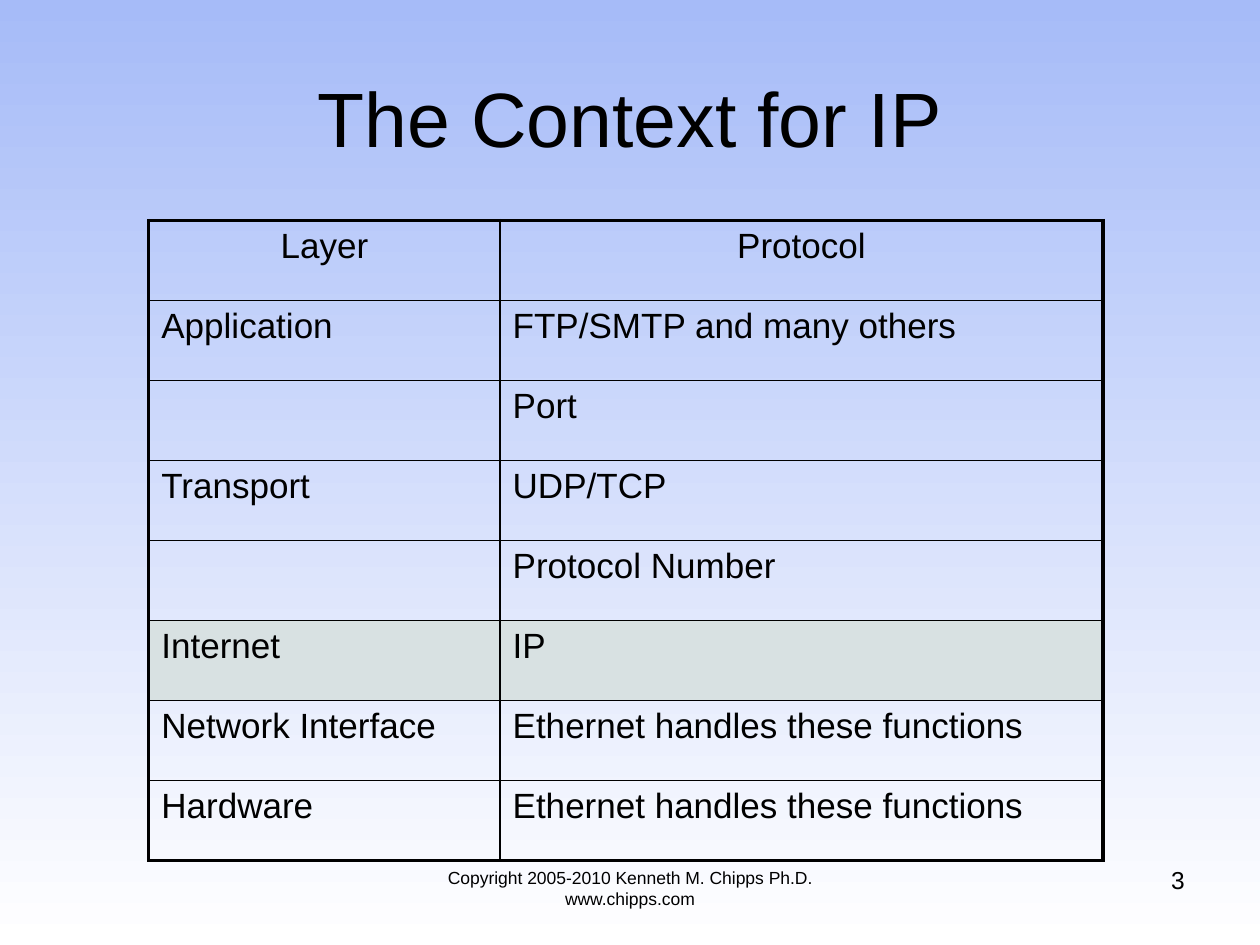
"""Build the slide that places IP among the network layers and their protocols."""
from lxml.etree import SubElement
from pptx import Presentation
from pptx.dml.color import RGBColor
from pptx.enum.text import MSO_ANCHOR as ANCHOR, PP_ALIGN as ALIGN
from pptx.oxml.ns import qn
from pptx.util import Pt

BLACK = RGBColor(0x00, 0x00, 0x00)
SKY = RGBColor(0xA6, 0xBB, 0xF8)
WHITE = RGBColor(0xFF, 0xFF, 0xFF)
HIGHLIGHT = RGBColor(0xD8, 0xE1, 0xE2)

TEXTS = [
    ("The Context for IP", (36, 21.6, 648, 90), 44, ALIGN.CENTER, ANCHOR.MIDDLE),
    ("Copyright 2005-2010 Kenneth M. Chipps Ph.D. www.chipps.com",
     (216, 492, 288, 37.5), 10, ALIGN.CENTER, ANCHOR.TOP),
    ("3", (516, 490.5, 168, 37.5), 14, ALIGN.RIGHT, ANCHOR.TOP),
]
ROWS = [
    ("Layer", "Protocol"),
    ("Application", "FTP/SMTP and many others"),
    ("", "Port"),
    ("Transport", "UDP/TCP"),
    ("", "Protocol Number"),
    ("Internet", "IP"),
    ("Network Interface", "Ethernet handles these functions"),
    ("Hardware", "Ethernet handles these functions"),
]
HIGHLIGHT_LAYER = "Internet"
TABLE_LEFT, TABLE_TOP, ROW_HEIGHT = 85, 126, 45.72
COL_WIDTHS = (200.75, 344.5)
OUTER, INNER = 2.25, 1


def write(tf, text, size, align):
    p = tf.paragraphs[0]
    p.alignment = align
    r = p.add_run()
    r.text = text
    for name, value in {"name": "Arial", "size": Pt(size)}.items():
        setattr(r.font, name, value)
    r.font.color.rgb = BLACK


def add_text(s, text, box, size, align, anchor):
    tf = s.shapes.add_textbox(*map(Pt, box)).text_frame
    for name, value in {"word_wrap": True, "vertical_anchor": anchor}.items():
        setattr(tf, name, value)
    write(tf, text, size, align)


def set_borders(cell, outer_sides):
    tc_pr = cell._tc.get_or_add_tcPr()
    for i, (side, is_outer) in enumerate(outer_sides.items()):
        ln = SubElement(tc_pr, qn(f"a:ln{side}"), w=str(Pt(OUTER if is_outer else INNER)))
        fill = SubElement(ln, qn("a:solidFill"))
        SubElement(fill, qn("a:srgbClr"), val=str(BLACK))
        tc_pr.remove(ln)
        tc_pr.insert(i, ln)


def add_layer_table(s):
    n_rows, n_cols = len(ROWS), len(COL_WIDTHS)
    box = (TABLE_LEFT, TABLE_TOP, sum(COL_WIDTHS), ROW_HEIGHT * n_rows)
    table = s.shapes.add_table(n_rows, n_cols, *map(Pt, box)).table
    table.first_row = table.horz_banding = False
    for col, width in zip(table.columns, COL_WIDTHS):
        col.width = Pt(width)
    for i, row in enumerate(ROWS):
        table.rows[i].height = Pt(ROW_HEIGHT)
        for j, text in enumerate(row):
            cell = table.cell(i, j)
            if row[0] == HIGHLIGHT_LAYER:
                cell.fill.solid()
                cell.fill.fore_color.rgb = HIGHLIGHT
            else:
                cell.fill.background()
            set_borders(cell, {"L": j == 0, "R": j == n_cols - 1,
                               "T": i == 0, "B": i == n_rows - 1})
            if text:
                write(cell.text_frame, text, 20, ALIGN.LEFT if i else ALIGN.CENTER)


def main():
    prs = Presentation()
    prs.slide_width, prs.slide_height = Pt(720), Pt(540)
    s = prs.slides.add_slide(prs.slide_layouts[6])
    fill = s.background.fill
    fill.gradient()
    fill.gradient_angle = 270
    for stop, color, position in zip(fill.gradient_stops, (SKY, WHITE), (0, 1)):
        stop.color.rgb = color
        stop.position = position
    title, *footers = TEXTS
    add_text(s, *title)
    add_layer_table(s)
    for footer in footers:
        add_text(s, *footer)
    prs.save("out.pptx")


if __name__ == "__main__":
    main()
